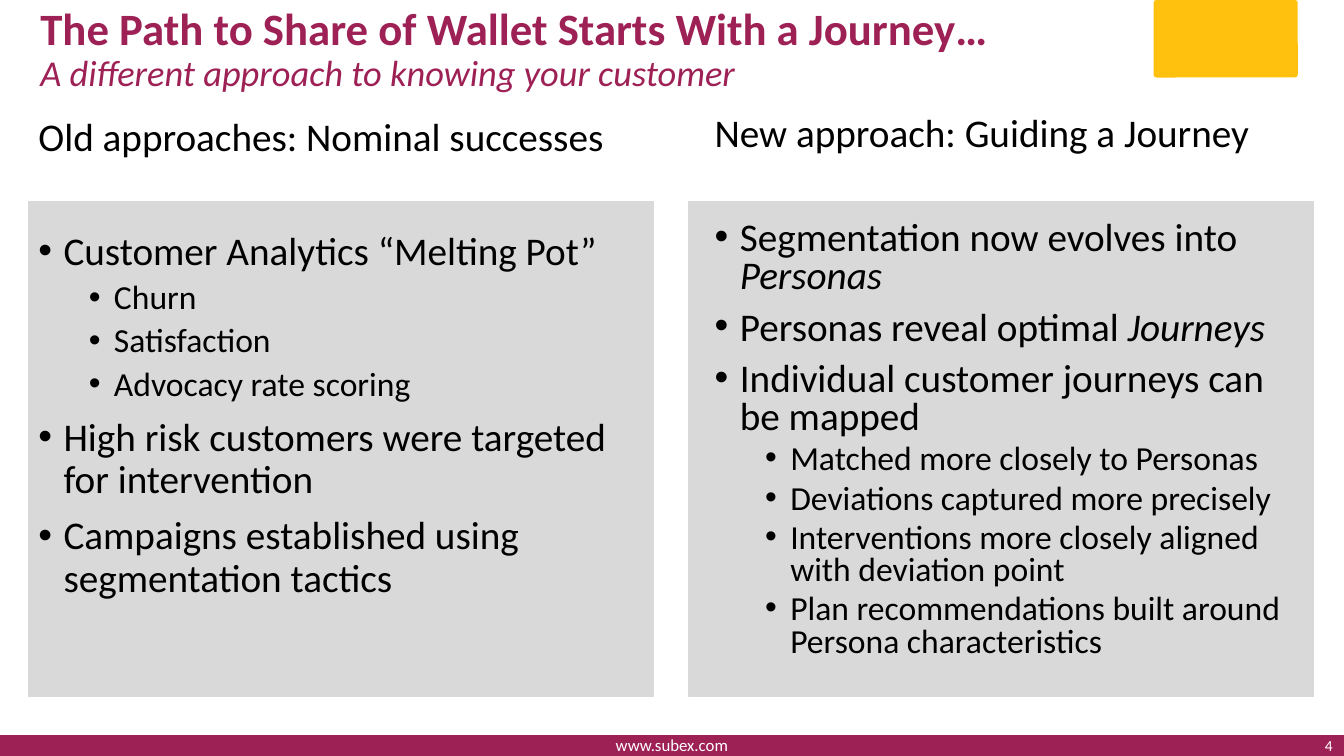
"""Build a slide comparing old and new approaches to customer knowledge."""
from lxml import etree
from pptx import Presentation
from pptx import util as u
from pptx.dml import color
from pptx.enum import shapes, text
from pptx.oxml import ns

MAROON = color.RGBColor(0x9E, 0x21, 0x56)
AMBER = color.RGBColor(0xFF, 0xC1, 0x0E)
GREY = color.RGBColor(0xD9, 0xD9, 0xD9)
BLACK = color.RGBColor(0, 0, 0)
WHITE = color.RGBColor(0xFF, 0xFF, 0xFF)

FONT = "Calibri"
LINE_HEIGHT = 1.22
COLUMN_TOP, COLUMN_WIDTH, COLUMN_HEIGHT = 80.6, 434, 432
PANEL_TOP, PANEL_WIDTH, PANEL_HEIGHT = 144, 446.4, 353.5

OLD_APPROACH = [
    (0, ["Customer Analytics “Melting Pot”"]),
    (1, ["Churn"]),
    (1, ["Satisfaction"]),
    (1, ["Advocacy rate scoring"]),
    (0, ["High risk customers were targeted for intervention"]),
    (0, ["Campaigns established using segmentation tactics"]),
]
NEW_APPROACH = [
    (0, ["Segmentation now evolves into ", "Personas"]),
    (0, ["Personas reveal optimal ", "Journeys"]),
    (0, ["Individual customer journeys can be mapped"]),
    (1, ["Matched more closely to Personas"]),
    (1, ["Deviations captured more precisely"]),
    (1, ["Interventions more closely aligned with deviation point"]),
    (1, ["Plan recommendations built around Persona characteristics"]),
]


def move(shape, left, top, width, height):
    shape.left, shape.top = u.Pt(left), u.Pt(top)
    shape.width, shape.height = u.Pt(width), u.Pt(height)


def set_font(para, size, ink, bold=False, italic=None):
    font = para.font
    font.name, font.size, font.bold, font.italic = FONT, u.Pt(size), bold, italic
    font.color.rgb = ink


def set_bullet(para, margin, bullet):
    properties = para._p.get_or_add_pPr()
    properties.set("marL", str(u.Pt(margin)))
    properties.set("indent", str(u.Pt(-18 if bullet else 0)))
    if bullet:
        etree.SubElement(properties, ns.qn("a:buChar")).set("char", "•")
    else:
        etree.SubElement(properties, ns.qn("a:buNone"))


def add_block(page, kind, frame, fill, line=None):
    block = page.shapes.add_shape(kind, *map(u.Pt, frame))
    block.shadow.inherit = False
    block.fill.solid()
    block.fill.fore_color.rgb = fill
    if line:
        block.line.color.rgb = line
        block.line.width = u.Pt(1)
    else:
        block.line.fill.background()
    return block


def add_label(page, frame, words, size, align):
    box = page.shapes.add_textbox(*map(u.Pt, frame)).text_frame
    box.word_wrap = True
    box.vertical_anchor = text.MSO_ANCHOR.MIDDLE
    para = box.paragraphs[0]
    para.text, para.alignment = words, align
    set_font(para, size, WHITE)


def place_holder(holder, frame, anchor):
    """Move a placeholder to its frame and in front of the blocks."""
    move(holder, *frame)
    holder.element.getparent().append(holder.element)
    box = holder.text_frame
    box.auto_size = text.MSO_AUTO_SIZE.NONE
    box.word_wrap = True
    box.vertical_anchor = anchor
    return box


def fill_heading(holder, frame, words, size, bold, italic):
    box = place_holder(holder, frame, text.MSO_ANCHOR.MIDDLE)
    para = box.paragraphs[0]
    para.text, para.alignment = words, text.PP_ALIGN.LEFT
    para.line_spacing, para.space_before = 0.9, u.Pt(0)
    set_font(para, size, MAROON, bold, italic)


def fill_column(holder, left, heading, items, spacing):
    """Write a heading and its two-level list, one blank line apart."""
    frame = (left, COLUMN_TOP, COLUMN_WIDTH, COLUMN_HEIGHT)
    box = place_holder(holder, frame, text.MSO_ANCHOR.TOP)
    para = box.paragraphs[0]
    para.text, para.line_spacing, para.space_before = heading, spacing, u.Pt(0)
    set_bullet(para, 0, False)
    set_font(para, 28, BLACK)
    for index, (level, spans) in enumerate(items):
        para = box.add_paragraph()
        para.level, para.line_spacing = level, spacing
        gap = 5 if level else 10
        if index == 0:
            gap = round(20 + 28 * LINE_HEIGHT * spacing, 1)
        para.space_before = u.Pt(gap)
        set_bullet(para, 18 + 36 * level, True)
        set_font(para, 24 if level else 28, BLACK)
        for position, words in enumerate(spans):
            span = para.add_run()
            span.text = words
            if position:
                span.font.italic = True


def main():
    deck = Presentation()
    deck.slide_width, deck.slide_height = u.Pt(960), u.Pt(540)
    page = deck.slides.add_slide(deck.slide_layouts[4])
    holders = {holder.placeholder_format.idx: holder for holder in page.placeholders}
    spare = holders[3].element
    spare.getparent().remove(spare)

    rectangle = shapes.MSO_SHAPE.RECTANGLE
    add_block(page, rectangle, (0, 525, 960, 15), MAROON)
    badge = add_block(page, shapes.MSO_SHAPE.ROUNDED_RECTANGLE, (824, 0, 103, 55.4), AMBER)
    badge.adjustments[0] = 0.04
    for left in (20.2, 491.8):
        add_block(page, rectangle, (left, PANEL_TOP, PANEL_WIDTH, PANEL_HEIGHT), GREY, GREY)

    add_label(page, (318, 527, 324, 10), "www.subex.com", 12, text.PP_ALIGN.CENTER)
    add_label(page, (743, 530.6, 216, 3.6), "4", 11, text.PP_ALIGN.RIGHT)

    fill_heading(holders[0], (21.6, 5, 794, 34),
                 "The Path to Share of Wallet Starts With a Journey…", 32, True, False)
    fill_heading(holders[1], (21.6, 41, 794, 25),
                 "A different approach to knowing your customer", 26, False, True)
    fill_column(holders[2], 20.2, "Old approaches: Nominal successes", OLD_APPROACH, 0.9)
    fill_column(holders[4], 503.3, "New approach: Guiding a Journey", NEW_APPROACH, 0.8)
    deck.save("out.pptx")


if __name__ == "__main__":
    main()
